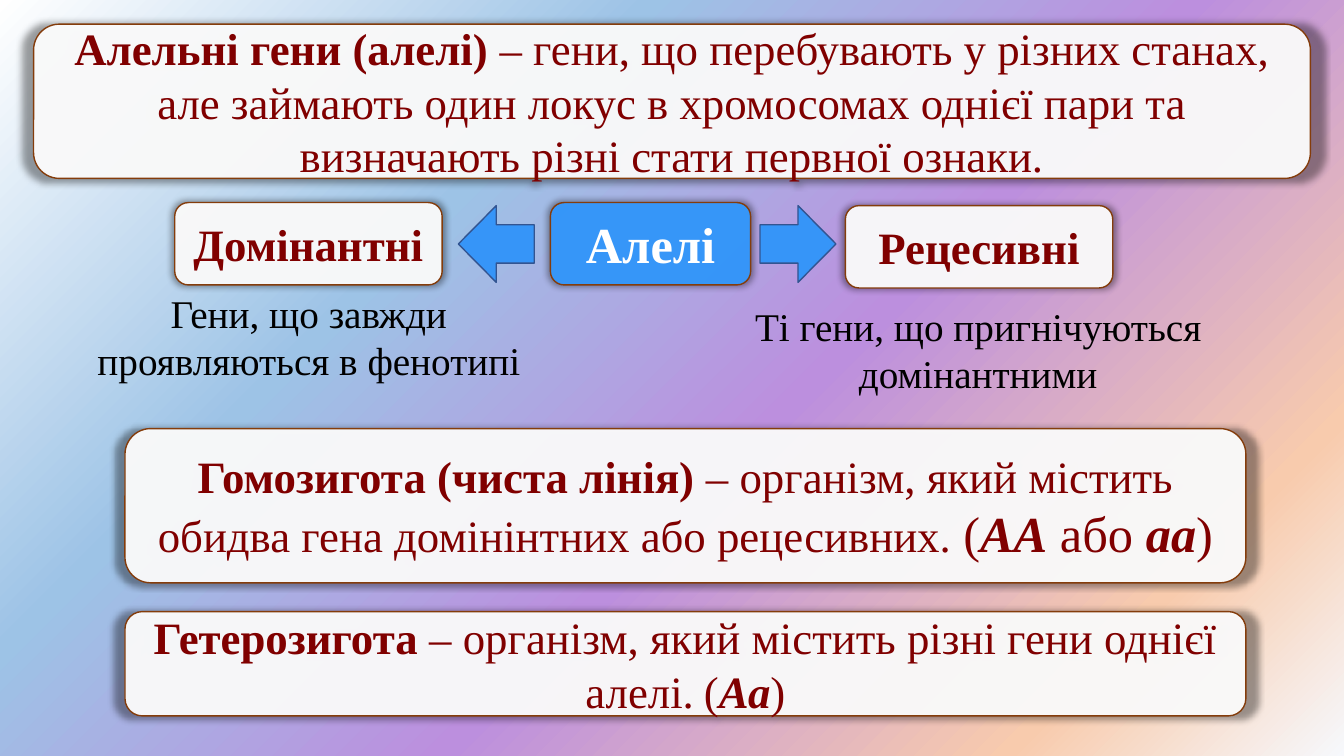
from lxml import etree
from pptx import Presentation
from pptx.dml.color import RGBColor
from pptx.enum.shapes import MSO_SHAPE
from pptx.enum.text import MSO_ANCHOR, MSO_AUTO_SIZE, PP_ALIGN
from pptx.oxml import parse_xml
from pptx.oxml.ns import nsdecls, qn
from pptx.util import Inches, Pt

ROUNDED = MSO_SHAPE.ROUNDED_RECTANGLE
LEFT_ARROW, RIGHT_ARROW = MSO_SHAPE.LEFT_ARROW, MSO_SHAPE.RIGHT_ARROW
CENTER, MIDDLE = PP_ALIGN.CENTER, MSO_ANCHOR.MIDDLE
GROW = MSO_AUTO_SIZE.SHAPE_TO_FIT_TEXT

FONT = "Times New Roman"
COLORS = {
    "card": "FFFFFF", "center": "3399FF", "border": "843C0B",
    "arrow": "3695F8", "arrow_line": "325491",
    "maroon": "800000", "white": "FFFFFF", "black": "000000",
}
BACKGROUND_STOPS = [(0, "F6F8FC"), (16, "F8CBAD"), (43, "BC8FDE"), (69, "9DC3E6"), (100, "FFFFFF")]

presentation = Presentation()
presentation.slide_width, presentation.slide_height = Inches(13.33), Inches(7.5)
slide = presentation.slides.add_slide(presentation.slide_layouts[6])


def place(left, top, width, height):
    """Turn percentages of the slide's size into lengths."""
    across, down = presentation.slide_width / 100, presentation.slide_height / 100
    return int(left * across), int(top * down), int(width * across), int(height * down)


def write(frame, runs, color):
    """Add centred runs given as (text, size, style), style holding b and i."""
    frame.word_wrap = True
    paragraph = frame.paragraphs[0]
    paragraph.alignment = CENTER
    for text, size, style in runs:
        run = paragraph.add_run()
        run.text = text
        run.font.name, run.font.size = FONT, Pt(size)
        run.font.bold, run.font.italic = "b" in style, "i" in style
        run.font.color.rgb = RGBColor.from_string(COLORS[color])


# Background: round gradient spreading from the bottom right corner
stops = "".join(
    f'<a:gs pos="{position * 1000}"><a:srgbClr val="{color}"/></a:gs>'
    for position, color in BACKGROUND_STOPS
)
background = parse_xml(
    f'<p:bg {nsdecls("p", "a")}><p:bgPr><a:gradFill rotWithShape="1"><a:gsLst>{stops}</a:gsLst>'
    '<a:path path="circle"><a:fillToRect l="100000" t="100000"/></a:path></a:gradFill>'
    "<a:effectLst/></p:bgPr></p:bg>"
)
slide.element.cSld.insert(0, background)

# Cards: place, fill, text colour, runs
cards = [
    ((2.5, 3.2, 95, 20.4), "card", "maroon", [
        ("Алельні гени (алелі) ", 32, "b"),
        ("– гени, що перебувають у різних станах, але займають один локус в хромосомах "
         "однієї пари та визначають різні стати первної ознаки.", 32, ""),
    ]),
    ((13, 26.8, 19.9, 10.9), "card", "maroon", [("Домінантні", 32, "b")]),
    ((62.9, 27.2, 19.9, 10.9), "card", "maroon", [("Рецесивні", 32, "b")]),
    ((40.95, 26.8, 14.9, 10.9), "center", "white", [("Алелі", 36, "b")]),
    ((9.3, 56.7, 83.4, 20.4), "card", "maroon", [
        ("Гомозигота (чиста лінія) ", 32, "b"),
        ("– організм, який містить обидва гена домінінтних або рецесивних. ", 32, ""),
        ("(", 36, ""), ("АА ", 36, "bi"), ("або ", 36, ""), ("аа", 36, "bi"), (")", 36, ""),
    ]),
    ((9.3, 80.9, 83.4, 13.8), "card", "maroon", [
        ("Гетерозигота ", 32, "b"),
        ("– організм, який містить різні гени однієї алелі.", 32, ""),
        (" ", 28, ""), ("(", 32, ""), ("Аа", 32, "bi"), (")", 32, ""),
    ]),
]
for box, fill, text_color, runs in cards:
    card = slide.shapes.add_shape(ROUNDED, *place(*box))
    card.fill.solid()
    card.fill.fore_color.rgb = RGBColor.from_string(COLORS[fill])
    card.line.color.rgb = RGBColor.from_string(COLORS["border"])
    card.line.width = Pt(1)
    card.shadow.inherit = False
    # Slight transparency and a soft shadow all around
    properties = card.element.spPr
    fill_color = properties.find(qn("a:solidFill")).find(qn("a:srgbClr"))
    etree.SubElement(fill_color, qn("a:alpha"), val="94000")
    properties.find(qn("a:effectLst")).append(parse_xml(
        f'<a:outerShdw {nsdecls("a")} blurRad="{Pt(5)}" sx="102000" sy="102000" algn="ctr" '
        'rotWithShape="0"><a:srgbClr val="000000"><a:alpha val="40000"/></a:srgbClr></a:outerShdw>'
    ))
    card.text_frame.vertical_anchor = MIDDLE
    write(card.text_frame, runs, text_color)

# Arrows from the central card to both kinds of alleles
for kind, left in ((LEFT_ARROW, 34.1), (RIGHT_ARROW, 56.55)):
    arrow = slide.shapes.add_shape(kind, *place(left, 27.2, 5.65, 10.15))
    arrow.fill.solid()
    arrow.fill.fore_color.rgb = RGBColor.from_string(COLORS["arrow"])
    arrow.line.color.rgb = RGBColor.from_string(COLORS["arrow_line"])
    arrow.line.width = Pt(1)
    arrow.shadow.inherit = False

# Explanations under both kinds
explanations = [
    (3.1, 37.6, "Гени, що завжди проявляються в фенотипі"),
    (52.9, 39.3, "Ті гени, що пригнічуються домінантними"),
]
for left, top, text in explanations:
    explanation = slide.shapes.add_textbox(*place(left, top, 39.75, 13.9))
    explanation.text_frame.auto_size = GROW
    write(explanation.text_frame, [(text, 28, "")], "black")

presentation.save("out.pptx")
